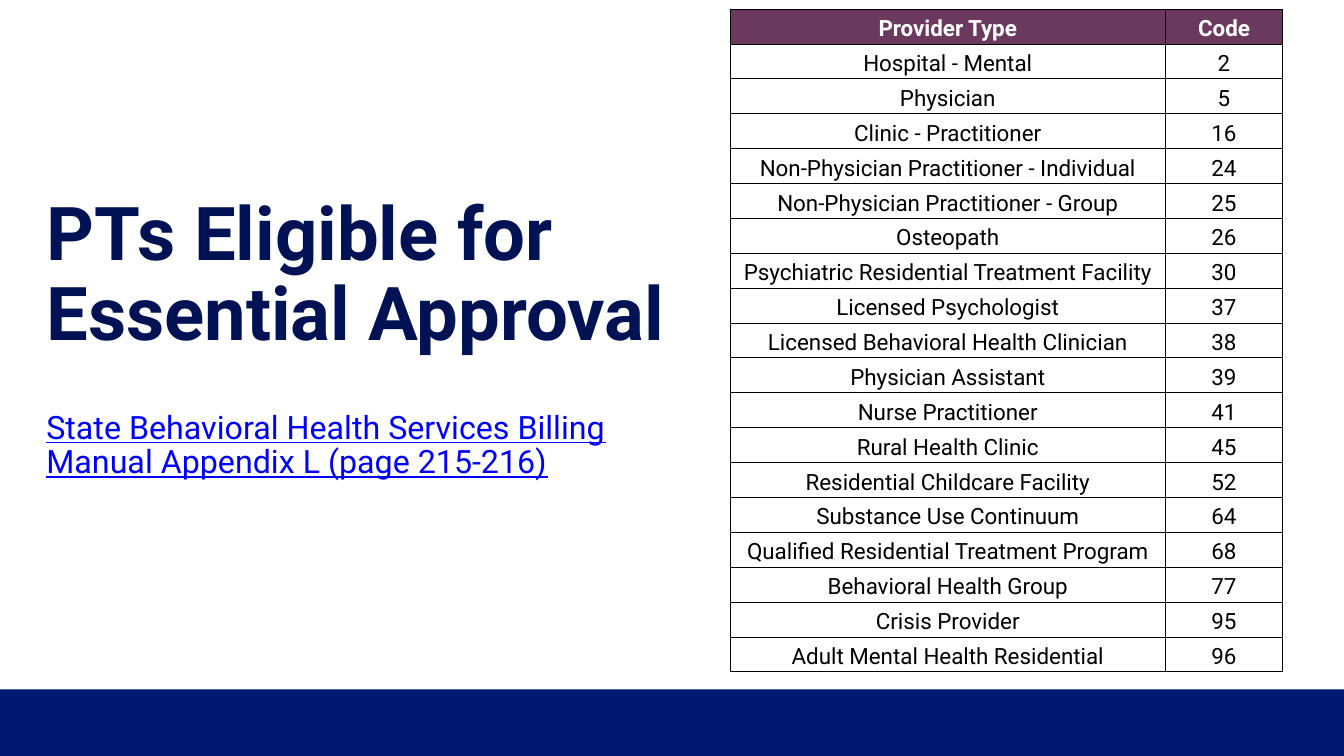
"""Build the slide listing provider types eligible for essential approval."""
import lxml.etree
import pptx
import pptx.dml.color
import pptx.enum.shapes
import pptx.enum.text
import pptx.oxml.ns
import pptx.util

Inches = pptx.util.Inches
Pt = pptx.util.Pt
ANCHOR = pptx.enum.text.MSO_ANCHOR

PROVIDERS = [
    ("Hospital - Mental", 2),
    ("Physician", 5),
    ("Clinic - Practitioner", 16),
    ("Non-Physician Practitioner - Individual", 24),
    ("Non-Physician Practitioner - Group", 25),
    ("Osteopath", 26),
    ("Psychiatric Residential Treatment Facility", 30),
    ("Licensed Psychologist", 37),
    ("Licensed Behavioral Health Clinician", 38),
    ("Physician Assistant", 39),
    ("Nurse Practitioner", 41),
    ("Rural Health Clinic", 45),
    ("Residential Childcare Facility", 52),
    ("Substance Use Continuum", 64),
    ("Qualified Residential Treatment Program", 68),
    ("Behavioral Health Group", 77),
    ("Crisis Provider", 95),
    ("Adult Mental Health Residential", 96),
]


def color(value):
    return pptx.dml.color.RGBColor.from_string(value)


class SlideBuilder:
    font = "Roboto"
    navy = "001970"
    title_color = "001254"
    link_color = "0000FF"
    header_fill = "6B395D"
    border_color = "000000"

    def __init__(self, slide):
        self.slide = slide

    def add_run(self, paragraph, text, size, text_color, bold=False, underline=False):
        run = paragraph.add_run()
        run.text = text
        run.font.name = self.font
        run.font.size = Pt(size)
        run.font.bold = bold
        run.font.underline = underline
        run.font.color.rgb = color(text_color)

    def add_band(self, left, top, width, height):
        shape = self.slide.shapes.add_shape(
            pptx.enum.shapes.MSO_SHAPE.RECTANGLE,
            Inches(left), Inches(top), Inches(width), Inches(height))
        shape.shadow.inherit = False
        shape.fill.solid()
        shape.fill.fore_color.rgb = color(self.navy)
        shape.line.fill.background()

    def add_heading(self, left, top, width, height, title, source):
        shape = self.slide.shapes.add_textbox(
            Inches(left), Inches(top), Inches(width), Inches(height))
        frame = shape.text_frame
        frame.word_wrap = True
        frame.vertical_anchor = ANCHOR.MIDDLE
        frame.margin_left = frame.margin_right = 0
        frame.margin_top = frame.margin_bottom = 0
        title_paragraph = frame.paragraphs[0]
        source_paragraph = frame.add_paragraph()
        title_paragraph.line_spacing = source_paragraph.line_spacing = 0.9
        source_paragraph.space_before = Pt(39)
        self.add_run(title_paragraph, title, 53, self.title_color, bold=True)
        self.add_run(source_paragraph, source, 23, self.link_color, underline=True)

    def add_borders(self, cell):
        properties = cell._tc.get_or_add_tcPr()
        qualified = pptx.oxml.ns.qn
        for side in ("a:lnL", "a:lnR", "a:lnT", "a:lnB"):
            line = lxml.etree.SubElement(properties, qualified(side), w=str(Pt(0.75)))
            fill = lxml.etree.SubElement(line, qualified("a:solidFill"))
            lxml.etree.SubElement(fill, qualified("a:srgbClr"), val=self.border_color)

    def fill_cell(self, cell, text, header):
        self.add_borders(cell)
        if header:
            cell.fill.solid()
            cell.fill.fore_color.rgb = color(self.header_fill)
        else:
            cell.fill.background()
        cell.vertical_anchor = ANCHOR.BOTTOM
        cell.margin_left = cell.margin_right = Inches(0.03)
        cell.margin_top = cell.margin_bottom = Inches(0.02)
        paragraph = cell.text_frame.paragraphs[0]
        paragraph.alignment = pptx.enum.text.PP_ALIGN.CENTER
        paragraph.line_spacing = 1.15
        self.add_run(paragraph, text, 16, "FFFFFF" if header else "000000", bold=header)

    def add_table(self, left, top, widths, row_height, rows):
        table = self.slide.shapes.add_table(
            len(rows), len(widths), Inches(left), Inches(top),
            Inches(sum(widths)), Inches(row_height * len(rows))).table
        table.first_row = table.horz_banding = False
        for column, width in zip(table.columns, widths):
            column.width = Inches(width)
        for row_index, values in enumerate(rows):
            table.rows[row_index].height = Inches(row_height)
            for column_index, value in enumerate(values):
                self.fill_cell(table.cell(row_index, column_index), str(value),
                               header=row_index == 0)


def main():
    presentation = pptx.Presentation()
    presentation.slide_width = Inches(13.33)
    presentation.slide_height = Inches(7.5)
    slide = presentation.slides.add_slide(presentation.slide_layouts[6])
    builder = SlideBuilder(slide)
    builder.add_band(0, 6.84, 13.33, 0.67)
    builder.add_heading(
        0.46, 0.71, 6.22, 5.3, "PTs Eligible for Essential Approval",
        "State Behavioral Health Services Billing Manual Appendix L (page 215-216)")
    builder.add_table(7.24, 0.09, (4.32, 1.16), 0.21,
                      [("Provider Type", "Code")] + PROVIDERS)
    presentation.save("out.pptx")


if __name__ == "__main__":
    main()
